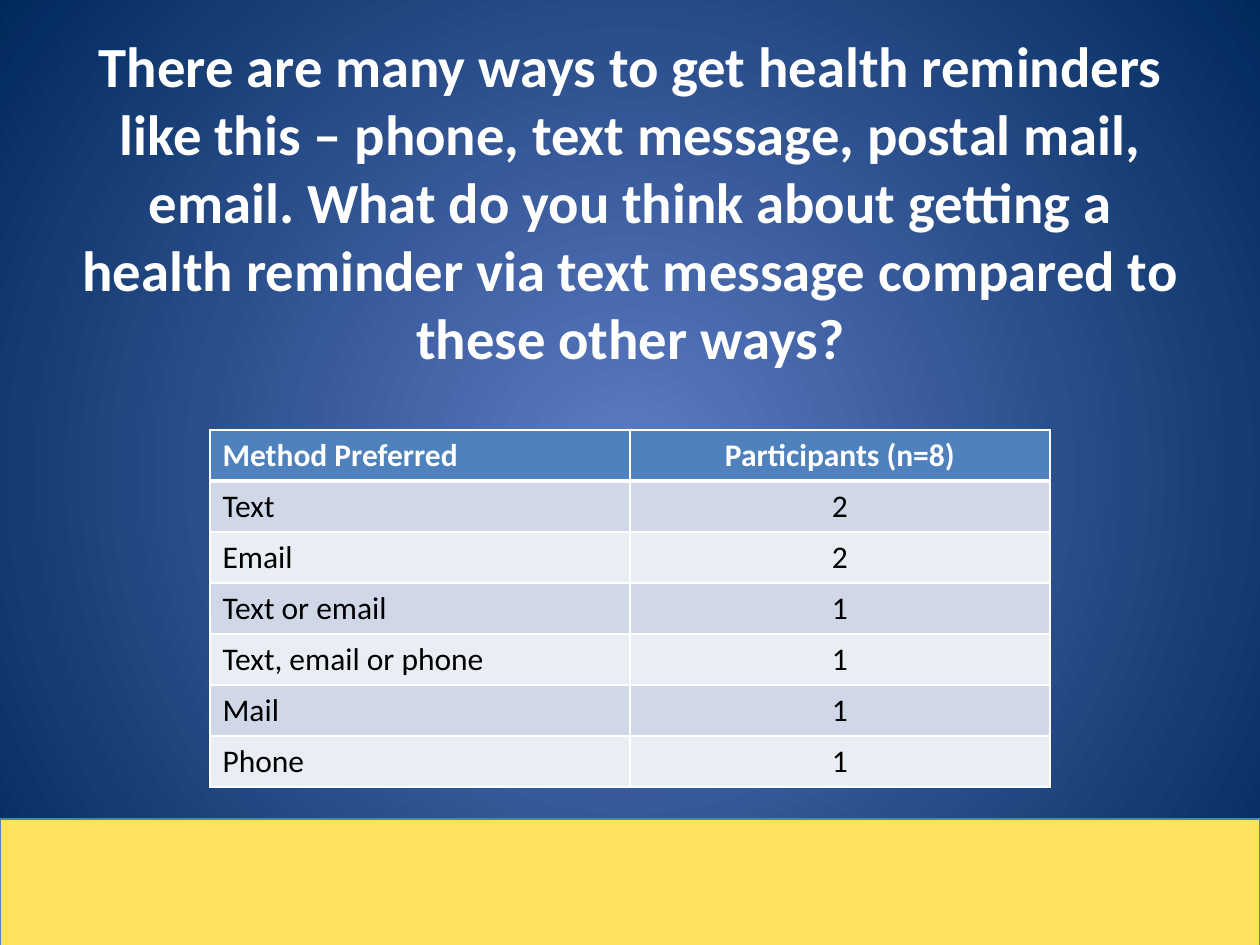
from lxml.etree import SubElement
from pptx import Presentation
from pptx.dml.color import RGBColor
from pptx.enum.shapes import MSO_SHAPE as Shape
from pptx.enum.text import MSO_ANCHOR as Anchor, PP_ALIGN as Align
from pptx.oxml.ns import qn
from pptx.util import Emu, Pt

QUESTION = (
    "There are many ways to get health reminders like this – phone, text message, "
    "postal mail, email. What do you think about getting a health reminder via text "
    "message compared to these other ways?"
)
PREFERENCES = [
    ("Method Preferred", "Participants (n=8)"),
    ("Text", "2"),
    ("Email", "2"),
    ("Text or email", "1"),
    ("Text, email or phone", "1"),
    ("Mail", "1"),
    ("Phone", "1"),
]
GLOW, NAVY, YELLOW, BLUE = "5E7CC5", "00295C", "FFE260", "4F81BD"
WHITE, BLACK = "FFFFFF", "000000"
BANDS = ("E9EDF4", "D0D8E8")
COLUMN_WIDTH, ROW_HEIGHT = 420, 51


def px(length):
    return Emu(round(length * 914400 / 126))


def rgb(value):
    return RGBColor.from_string(value)


def write(frame, text, size=18, color=BLACK, bold=False, align=Align.LEFT):
    frame.word_wrap = True
    paragraph = frame.paragraphs[0]
    paragraph.alignment = align
    run = paragraph.add_run()
    run.text = text
    run.font.name = "Calibri"
    run.font.size = Pt(size)
    run.font.bold = bold
    run.font.color.rgb = rgb(color)


def add_borders(cell, bottom=1):
    properties = cell._tc.get_or_add_tcPr()
    for side, width in (("L", 1), ("R", 1), ("T", 1), ("B", bottom)):
        border = SubElement(properties, qn(f"a:ln{side}"), w=str(Pt(width)))
        SubElement(SubElement(border, qn("a:solidFill")), qn("a:srgbClr"), val=WHITE)


prs = Presentation()
prs.slide_width, prs.slide_height = px(1260), px(945)
slide = prs.slides.add_slide(prs.slide_layouts[6])

# Background: radial glow from the centre
background = slide.background.fill
background.gradient()
for stop, color in zip(background.gradient_stops, (GLOW, NAVY)):
    stop.color.rgb = rgb(color)
linear = next(slide._element.iter(qn("a:lin")))
gradient = linear.getparent()
gradient.remove(linear)
circle = SubElement(gradient, qn("a:path"), path="circle")
SubElement(circle, qn("a:fillToRect"), l="50000", t="50000", r="50000", b="50000")

# Yellow footer band
footer = slide.shapes.add_shape(Shape.RECTANGLE, px(0), px(819), px(1260), px(127))
footer.shadow.inherit = False
footer.fill.solid()
footer.fill.fore_color.rgb = rgb(YELLOW)
footer.line.color.rgb = rgb(BLUE)
footer.line.width = Pt(0.75)

# Question
question = slide.shapes.add_textbox(px(63), px(68), px(1135), px(265)).text_frame
question.vertical_anchor = Anchor.MIDDLE
write(question, QUESTION, size=32.4, color=WHITE, bold=True, align=Align.CENTER)

# Preference table
table = slide.shapes.add_table(
    len(PREFERENCES), 2, px(210), px(430),
    px(2 * COLUMN_WIDTH), px(len(PREFERENCES) * ROW_HEIGHT),
).table
for column in table.columns:
    column.width = px(COLUMN_WIDTH)
for r, preference in enumerate(PREFERENCES):
    header = r == 0
    table.rows[r].height = px(ROW_HEIGHT)
    for c, text in enumerate(preference):
        cell = table.cell(r, c)
        add_borders(cell, bottom=3 if header else 1)
        cell.fill.solid()
        cell.fill.fore_color.rgb = rgb(BLUE if header else BANDS[r % 2])
        cell.vertical_anchor = Anchor.MIDDLE if c else Anchor.TOP
        write(cell.text_frame, text, color=WHITE if header else BLACK, bold=header,
              align=Align.CENTER if c else Align.LEFT)

prs.save("out.pptx")
